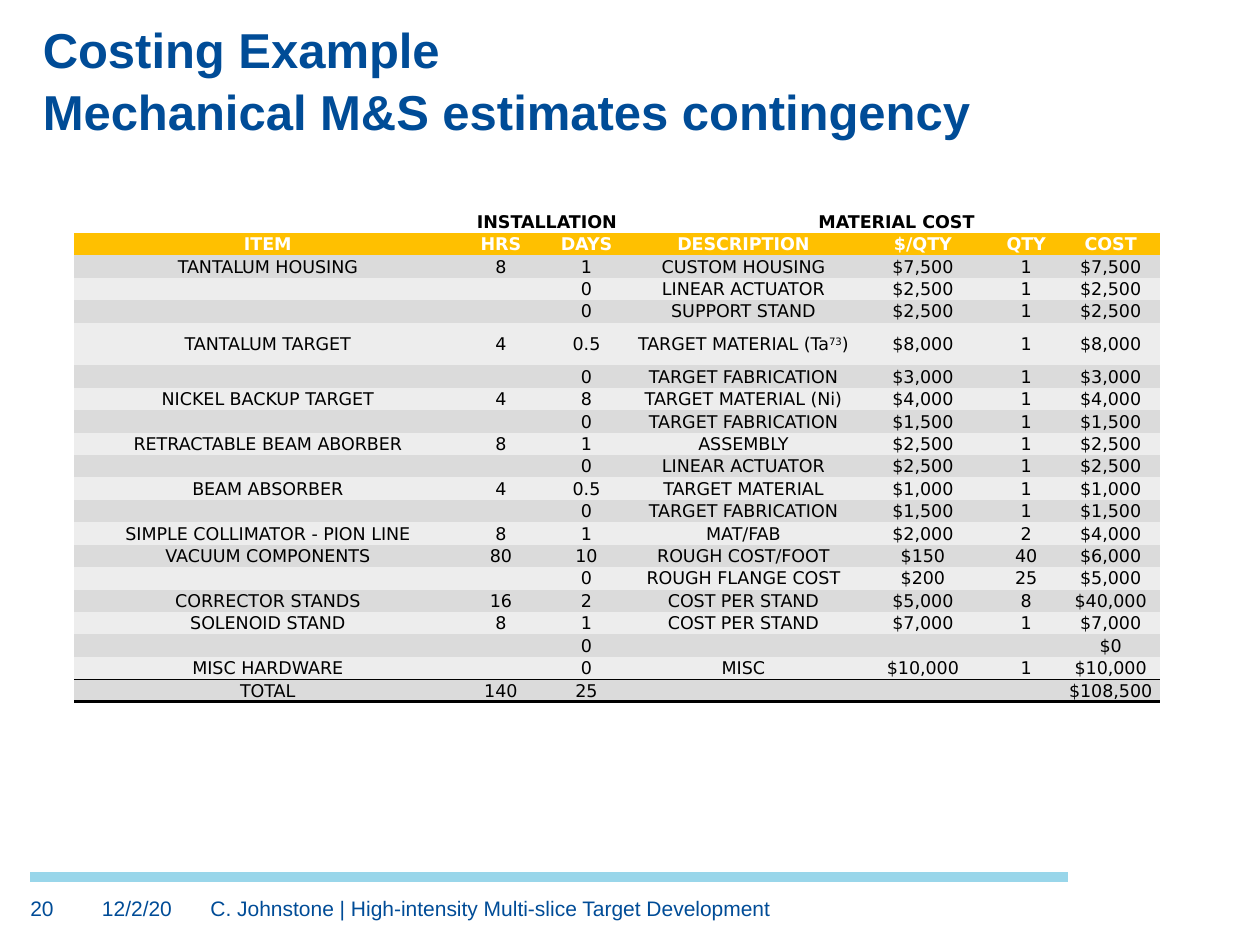
from dataclasses import astuple, dataclass

from lxml import etree
from pptx import Presentation
from pptx.dml.color import RGBColor
from pptx.enum import shapes, text
from pptx.oxml import ns
from pptx.util import Inches, Pt

COLOURS = {
    "navy": "004C97",
    "sky": "99D6EA",
    "amber": "FFC000",
    "dark_band": "DBDBDB",
    "light_band": "EDEDED",
    "black": "000000",
    "white": "FFFFFF",
}
NO_STYLE = "{2D5ABB26-0587-4C30-8999-92F81FD0307C}"
COLUMN_WIDTHS = [3.07, 0.63, 0.73, 1.76, 1.09, 0.55, 0.79]
TALL_ROW, TALL_HEIGHT, TABLE_HEIGHT = 5, 0.34, 3.9


@dataclass
class CostRow:
    item: str = ""
    hours: str = ""
    days: str = ""
    description: str = ""
    unit_price: str = ""
    quantity: str = ""
    cost: str = ""


@dataclass
class Label:
    words: str
    left: float
    top: float
    width: float
    height: float
    size: int = 12
    bold: bool = False
    anchor: text.MSO_ANCHOR = text.MSO_ANCHOR.TOP
    spacing: float = 1.0


COSTS = [
    CostRow(hours="INSTALLATION", description="MATERIAL COST"),
    CostRow("ITEM", "HRS", "DAYS", "DESCRIPTION", "$/QTY", "QTY", "COST"),
    CostRow("TANTALUM HOUSING", "8", "1", "CUSTOM HOUSING", "$7,500", "1", "$7,500"),
    CostRow("", "", "0", "LINEAR ACTUATOR", "$2,500", "1", "$2,500"),
    CostRow("", "", "0", "SUPPORT STAND", "$2,500", "1", "$2,500"),
    CostRow("TANTALUM TARGET", "4", "0.5", "TARGET MATERIAL (Ta^73^)", "$8,000", "1", "$8,000"),
    CostRow("", "", "0", "TARGET FABRICATION", "$3,000", "1", "$3,000"),
    CostRow("NICKEL BACKUP TARGET", "4", "8", "TARGET MATERIAL (Ni)", "$4,000", "1", "$4,000"),
    CostRow("", "", "0", "TARGET FABRICATION", "$1,500", "1", "$1,500"),
    CostRow("RETRACTABLE BEAM ABORBER", "8", "1", "ASSEMBLY", "$2,500", "1", "$2,500"),
    CostRow("", "", "0", "LINEAR ACTUATOR", "$2,500", "1", "$2,500"),
    CostRow("BEAM ABSORBER", "4", "0.5", "TARGET MATERIAL", "$1,000", "1", "$1,000"),
    CostRow("", "", "0", "TARGET FABRICATION", "$1,500", "1", "$1,500"),
    CostRow("SIMPLE COLLIMATOR - PION LINE", "8", "1", "MAT/FAB", "$2,000", "2", "$4,000"),
    CostRow("VACUUM COMPONENTS", "80", "10", "ROUGH COST/FOOT", "$150", "40", "$6,000"),
    CostRow("", "", "0", "ROUGH FLANGE COST", "$200", "25", "$5,000"),
    CostRow("CORRECTOR STANDS", "16", "2", "COST PER STAND", "$5,000", "8", "$40,000"),
    CostRow("SOLENOID STAND", "8", "1", "COST PER STAND", "$7,000", "1", "$7,000"),
    CostRow(days="0", cost="$0"),
    CostRow("MISC HARDWARE", "", "0", "MISC", "$10,000", "1", "$10,000"),
    CostRow("TOTAL", "140", "25", cost="$108,500"),
]
LABELS = [
    Label("Costing Example\vMechanical M&S estimates contingency", 0.34, 0.37, 9.5, 0.74,
          28, True, text.MSO_ANCHOR.BOTTOM, 1.05),
    Label("12/2/20", 0.81, 7.11, 0.74, 0.26),
    Label("C. Johnstone | High-intensity Multi-slice Target Development", 1.67, 7.11, 6.85, 0.27),
    Label("20", 0.24, 7.11, 0.45, 0.26),
]


def colour(name: str) -> RGBColor:
    return RGBColor.from_string(COLOURS[name])


def format_span(span, size: int, font: str, tint: str, bold: bool) -> None:
    span.font.size = Pt(size)
    span.font.name = font
    span.font.bold = bold
    span.font.color.rgb = colour(tint)


def draw_label(page, label: Label) -> None:
    box = page.shapes.add_textbox(Inches(label.left), Inches(label.top),
                                  Inches(label.width), Inches(label.height))
    frame = box.text_frame
    frame.word_wrap = True
    frame.vertical_anchor = label.anchor
    frame.margin_left = frame.margin_right = frame.margin_top = frame.margin_bottom = 0
    frame.text = label.words
    para = frame.paragraphs[0]
    para.line_spacing = label.spacing
    for span in para.runs:
        format_span(span, label.size, "Arial", "navy", label.bold)


def draw_footer_rule(page) -> None:
    rule = page.shapes.add_connector(shapes.MSO_CONNECTOR.STRAIGHT, Inches(0.24), Inches(6.96),
                                     Inches(8.48), Inches(6.96))
    rule.line.color.rgb = colour("sky")
    rule.line.width = Pt(6)
    etree.SubElement(rule._element.spPr, ns.qn("a:effectLst"))


def add_border(cell, side: str, points: float) -> None:
    border = etree.Element(ns.qn(f"a:ln{side}"), w=str(Pt(points)))
    fill = etree.SubElement(border, ns.qn("a:solidFill"))
    etree.SubElement(fill, ns.qn("a:srgbClr"), val=COLOURS["black"])
    cell._tc.get_or_add_tcPr().insert(0, border)


def fill_cell(cell, words: str, band: str | None, tint: str, bold: bool) -> None:
    cell.margin_left = cell.margin_right = cell.margin_top = Inches(0.01)
    cell.margin_bottom = 0
    cell.vertical_anchor = text.MSO_ANCHOR.MIDDLE
    if band:
        cell.fill.solid()
        cell.fill.fore_color.rgb = colour(band)
    else:
        cell.fill.background()
    para = cell.text_frame.paragraphs[0]
    para.alignment = text.PP_ALIGN.CENTER
    if not words:
        etree.SubElement(para._p, ns.qn("a:endParaRPr"), sz="1000")
        return
    for index, piece in enumerate(words.split("^")):
        span = para.add_run()
        span.text = piece
        format_span(span, 10, "DejaVu Sans", tint, bold)
        if index % 2:
            span.font._element.set("baseline", "30000")


def row_look(row: int) -> tuple[str | None, str, bool]:
    if row == 0:
        return None, "black", True
    if row == 1:
        return "amber", "white", True
    return ("light_band" if row % 2 else "dark_band"), "black", False


def draw_costs(page) -> None:
    last = len(COSTS) - 1
    frame = page.shapes.add_table(len(COSTS), len(COLUMN_WIDTHS), Inches(0.59), Inches(1.67),
                                  Inches(sum(COLUMN_WIDTHS)), Inches(TABLE_HEIGHT))
    table = frame.table
    table.first_row = table.horz_banding = False
    table._tbl.tblPr.find(ns.qn("a:tableStyleId")).text = NO_STYLE
    for column, width in zip(table.columns, COLUMN_WIDTHS):
        column.width = Inches(width)
    plain_height = (TABLE_HEIGHT - TALL_HEIGHT) / last
    for row, entry in enumerate(COSTS):
        table.rows[row].height = Inches(TALL_HEIGHT if row == TALL_ROW else plain_height)
        for column, words in enumerate(astuple(entry)):
            cell = table.cell(row, column)
            fill_cell(cell, words, *row_look(row))
            if row == last - 1:
                add_border(cell, "B", 0.5)
            if row == last:
                add_border(cell, "B", 2)
                add_border(cell, "T", 0.5)
    for first, end in [(1, 2), (3, 6)]:
        table.cell(0, first).merge(table.cell(0, end))


def main() -> None:
    deck = Presentation()
    deck.slide_width, deck.slide_height = Inches(10), Inches(7.5)
    page = deck.slides.add_slide(deck.slide_layouts[6])
    draw_footer_rule(page)
    for label in LABELS:
        draw_label(page, label)
    draw_costs(page)
    deck.save("out.pptx")


if __name__ == "__main__":
    main()
